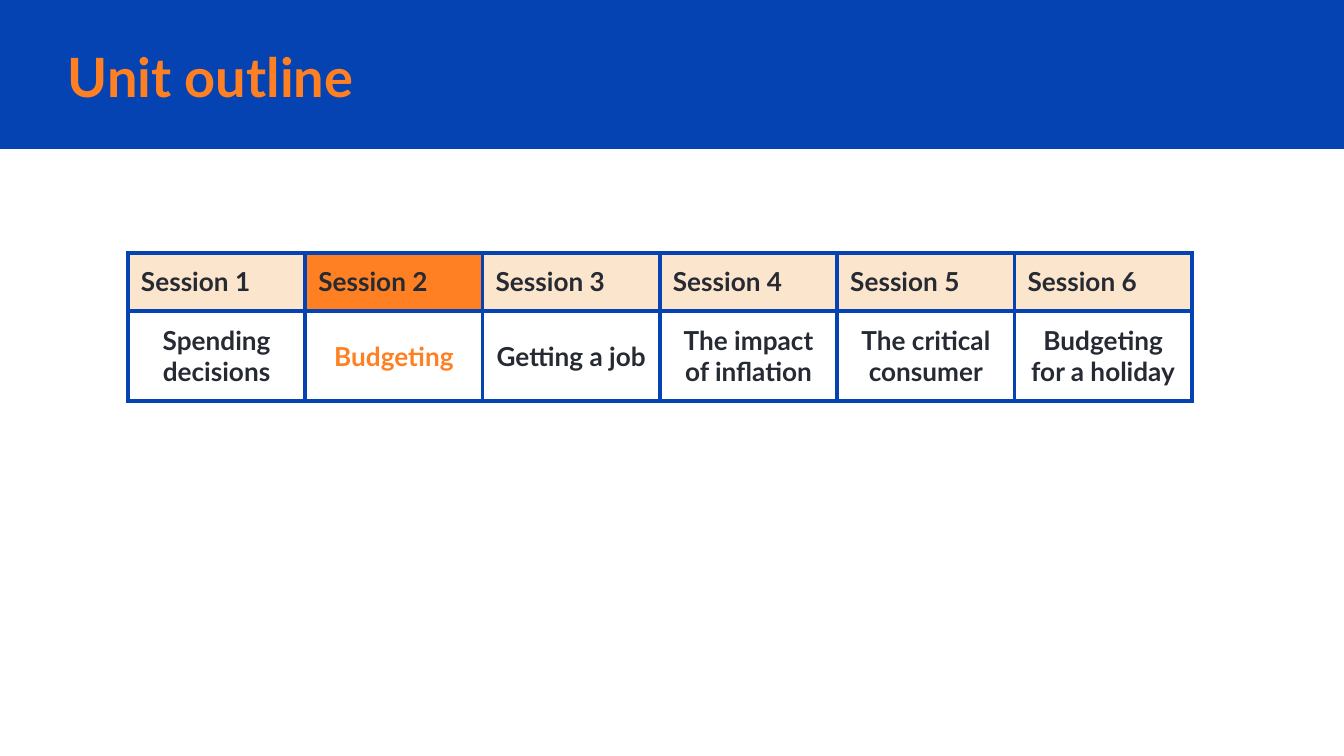
"""Build the unit outline slide with its table of sessions."""
from dataclasses import dataclass

from lxml import etree
from pptx import Presentation
from pptx import util as u
from pptx.dml.color import RGBColor
from pptx.enum import shapes, text
from pptx.oxml import ns

SCALE = 914400 / 134.4


@dataclass(frozen=True)
class Theme:
    blue: str = "0543B3"
    bright: str = "FF8022"
    cream: str = "FCE5CD"
    ink: str = "262A33"
    font: str = "Lato"
    head: int = 29
    body: int = 14
    rule: float = 2.25


@dataclass(frozen=True)
class Box:
    left: int
    top: int
    width: int
    height: int

    def emu(self) -> list[int]:
        return [px(n) for n in (self.left, self.top, self.width, self.height)]


@dataclass(frozen=True)
class Session:
    name: str
    topic: str
    now: bool = False


THEME = Theme()
BAND = Box(0, 0, 1344, 149)
TITLE = Box(55, 38, 1137, 75)
GRID = Box(128, 253, 1064, 148)
ROWS = (58, 90)
INSET = 13
SESSIONS = [
    Session("Session 1", "Spending decisions"),
    Session("Session 2", "Budgeting", now=True),
    Session("Session 3", "Getting a job"),
    Session("Session 4", "The impact of inflation"),
    Session("Session 5", "The critical consumer"),
    Session("Session 6", "Budgeting for a holiday"),
]


def px(count: int) -> int:
    return round(count * SCALE)


def apply(target, values: dict) -> None:
    for key, value in values.items():
        setattr(target, key, value)


def write(frame, words: str, size: int, color: str, align) -> None:
    frame.text = words
    para = frame.paragraphs[0]
    para.alignment = align
    font = para.runs[0].font
    apply(font, {"name": THEME.font, "size": u.Pt(size), "bold": True})
    font.color.rgb = RGBColor.from_string(color)


def border(cell) -> None:
    props = cell._tc.get_or_add_tcPr()
    for side in ("lnL", "lnR", "lnT", "lnB"):
        line = etree.SubElement(props, ns.qn(f"a:{side}"), w=str(u.Pt(THEME.rule)))
        fill = etree.SubElement(line, ns.qn("a:solidFill"))
        etree.SubElement(fill, ns.qn("a:srgbClr"), val=THEME.blue)


def draw_cell(cell, words: str, color: str, fill: str | None, align, anchor) -> None:
    sides = ("left", "right", "top", "bottom")
    apply(cell, {f"margin_{side}": px(INSET) for side in sides})
    cell.vertical_anchor = anchor
    write(cell.text_frame, words, THEME.body, color, align)
    border(cell)
    if fill:
        cell.fill.solid()
        cell.fill.fore_color.rgb = RGBColor.from_string(fill)
    else:
        cell.fill.background()


def draw_band(slide) -> None:
    band = slide.shapes.add_shape(shapes.MSO_SHAPE.RECTANGLE, *BAND.emu())
    band.shadow.inherit = False
    band.fill.solid()
    band.fill.fore_color.rgb = RGBColor.from_string(THEME.blue)
    band.line.fill.background()
    slide.shapes._spTree.insert(2, band._element)


def draw_title(slide, words: str) -> None:
    title = slide.shapes.title
    apply(title, dict(zip(("left", "top", "width", "height"), TITLE.emu())))
    frame = title.text_frame
    apply(frame, {
        "margin_left": px(INSET), "margin_right": px(INSET),
        "margin_top": 0, "margin_bottom": 0, "word_wrap": True,
        "auto_size": text.MSO_AUTO_SIZE.NONE,
        "vertical_anchor": text.MSO_ANCHOR.MIDDLE,
    })
    write(frame, words, THEME.head, THEME.bright, text.PP_ALIGN.LEFT)


def draw_grid(slide, items: list[Session]) -> None:
    table = slide.shapes.add_table(len(ROWS), len(items), *GRID.emu()).table
    apply(table, {"first_row": False, "horz_banding": False})
    for row, height in zip(table.rows, ROWS):
        row.height = px(height)
    for col, item in enumerate(items):
        fill = THEME.bright if item.now else THEME.cream
        color = THEME.bright if item.now else THEME.ink
        draw_cell(table.cell(0, col), item.name, THEME.ink, fill,
                  text.PP_ALIGN.LEFT, text.MSO_ANCHOR.TOP)
        draw_cell(table.cell(1, col), item.topic, color, None,
                  text.PP_ALIGN.CENTER, text.MSO_ANCHOR.MIDDLE)


def main() -> None:
    deck = Presentation()
    apply(deck, {"slide_width": px(1344), "slide_height": px(756)})
    slide = deck.slides.add_slide(deck.slide_layouts[5])
    draw_band(slide)
    draw_title(slide, "Unit outline")
    draw_grid(slide, SESSIONS)
    deck.save("out.pptx")


if __name__ == "__main__":
    main()
